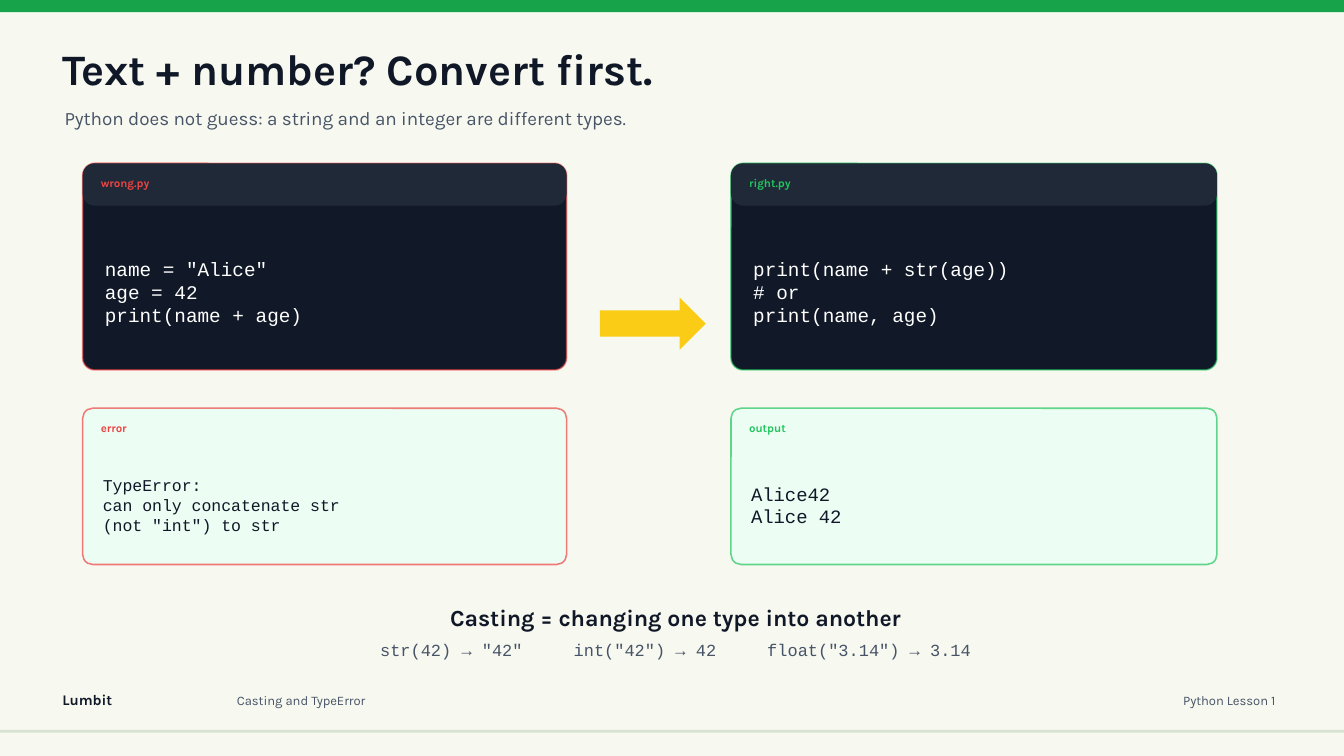
"""Build a lesson slide on casting, with wrong and right code side by side."""
import pptx
import pptx.dml.color
import pptx.enum.shapes
import pptx.enum.text
import pptx.oxml
import pptx.oxml.ns
import pptx.util

SHAPES = pptx.enum.shapes.MSO_SHAPE
ALIGN = pptx.enum.text.PP_ALIGN
COLUMNS, ROWS = 1333, 750
CELL = pptx.util.Inches(0.01)
INK, GREY, RED, GREEN = "101828", "475467", "EF4444", "22C55E"

FORMATS = {
    "title": {"size": 31, "name": "Karla", "bold": True},
    "subtitle": {"size": 13.5, "name": "Karla"},
    "rule": {"size": 16.5, "name": "Karla", "bold": True},
    "label": {"size": 8.2, "name": "Karla", "bold": True},
    "brand": {"size": 10.5, "name": "Karla", "bold": True},
    "footer": {"size": 9.3, "name": "Karla"},
    "code": {"size": 13.8, "name": "Courier New"},
    "error": {"size": 11.8, "name": "Courier New"},
    "output": {"size": 13.5, "name": "Courier New"},
    "example": {"size": 12.1, "name": "Courier New"},
}

presentation = pptx.Presentation()
presentation.slide_width = COLUMNS * CELL
presentation.slide_height = ROWS * CELL
slide = presentation.slides.add_slide(presentation.slide_layouts[6])
color = pptx.dml.color.RGBColor.from_string
slide.background.fill.solid()
slide.background.fill.fore_color.rgb = color("F7F8EF")


def add_block(kind, column, row, columns, rows, fill, radius=None, line=None, opacity=100):
    """Add a filled shape, with an optional corner radius and outline."""
    shape = slide.shapes.add_shape(kind, column * CELL, row * CELL, columns * CELL, rows * CELL)
    shape.shadow.inherit = False
    shape.fill.solid()
    shape.fill.fore_color.rgb = color(fill)
    if radius:
        shape.adjustments[0] = radius / min(columns, rows)
    if not line:
        shape.line.fill.background()
        return
    shape.line.width = pptx.util.Pt(1.1)
    shape.line.color.rgb = color(line)
    outline_color = shape.line.fill._xPr.find(".//" + pptx.oxml.ns.qn("a:srgbClr"))
    alpha = pptx.oxml.parse_xml(f'<a:alpha {pptx.oxml.ns.nsdecls("a")} val="{opacity * 1000}"/>')
    outline_color.append(alpha)


def add_text(column, row, columns, rows, text, style, ink, align=ALIGN.LEFT):
    """Add a text box with no margins and one paragraph for each line."""
    box = slide.shapes.add_textbox(column * CELL, row * CELL, columns * CELL, rows * CELL)
    frame = box.text_frame
    frame.word_wrap = True
    frame.vertical_anchor = pptx.enum.text.MSO_ANCHOR.MIDDLE
    for side in ("left", "top", "right", "bottom"):
        setattr(frame, f"margin_{side}", 0)
    frame.text = text
    for paragraph in frame.paragraphs:
        paragraph.alignment = align
        for run in paragraph.runs:
            for attribute, value in FORMATS[style].items():
                setattr(run.font, attribute, pptx.util.Pt(value) if attribute == "size" else value)
            run.font.color.rgb = color(ink)


add_block(SHAPES.RECTANGLE, 0, 0, COLUMNS, 12, "16A34A")
add_block(SHAPES.RECTANGLE, 0, 724, COLUMNS, 3, "D7E3D0")
add_text(62, 683, 120, 22, "Lumbit", "brand", INK)
add_text(235, 684, 650, 22, "Casting and TypeError", "footer", GREY)
add_text(1080, 684, 185, 22, "Python Lesson 1", "footer", GREY, ALIGN.RIGHT)
add_text(62, 42, 840, 52, "Text + number? Convert first.", "title", INK)
add_text(64, 102, 1060, 30,
         "Python does not guess: a string and an integer are different types.", "subtitle", GREY)

examples = [
    (82, 480, RED, "wrong.py", 'name = "Alice"\nage = 42\nprint(name + age)',
     "error", 'TypeError:\ncan only concatenate str\n(not "int") to str'),
    (725, 482, GREEN, "right.py", "print(name + str(age))\n# or\nprint(name, age)",
     "output", "Alice42\nAlice 42"),
]
for left, width, accent, file_name, code, result, message in examples:
    add_block(SHAPES.ROUNDED_RECTANGLE, left, 162, width, 205, "111827", 12, accent, 60)
    add_block(SHAPES.ROUNDED_RECTANGLE, left, 162, width, 42, "1F2937", 12)
    add_text(left + 18, 174, width - 36, 14, file_name, "label", accent)
    add_text(left + 22, 222, width - 44, 135, code, "code", "FFFFFF")
    add_block(SHAPES.ROUNDED_RECTANGLE, left, 405, width, 155, "ECFDF3", 10, accent, 70)
    add_text(left + 18, 418, width - 36, 14, result, "label", accent)
    add_text(left + 20, 451, width - 40, 100, message, result, INK)

add_block(SHAPES.RIGHT_ARROW, 595, 295, 105, 52, "FACC15")

add_text(180, 598, 980, 28, "Casting = changing one type into another", "rule", INK, ALIGN.CENTER)
for index, cast in enumerate(['str(42) → "42"', 'int("42") → 42', 'float("3.14") → 3.14']):
    add_text(377 + 192 * index, 635, 11 * len(cast), 20, cast, "example", GREY)

presentation.save("out.pptx")
